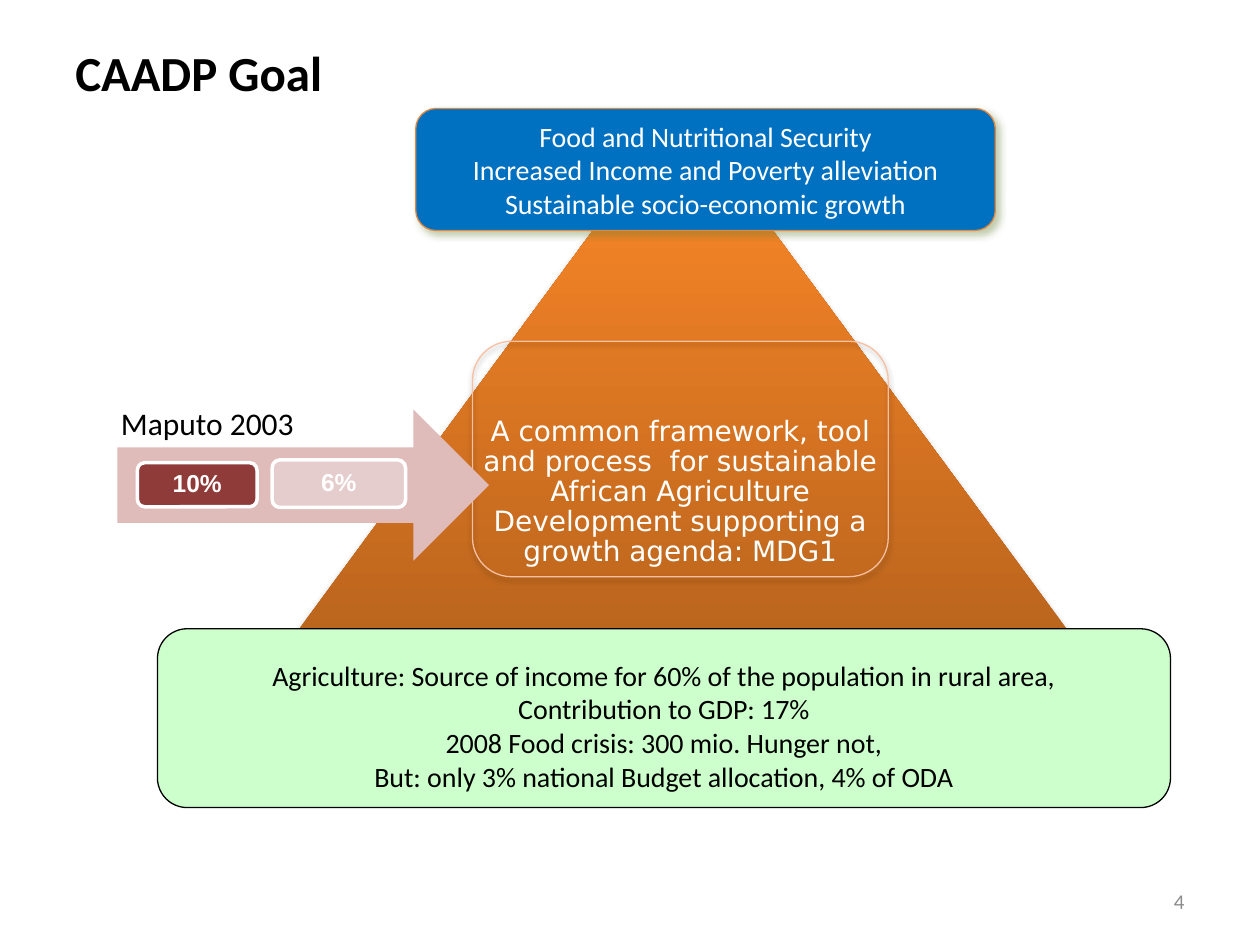
import pptx
import pptx.util
import pptx.dml.color
import pptx.enum.shapes
import pptx.enum.text
import pptx.oxml
import pptx.oxml.ns
from dataclasses import dataclass

Pt = pptx.util.Pt
Shape = pptx.enum.shapes.MSO_SHAPE
Align = pptx.enum.text.PP_ALIGN
Anchor = pptx.enum.text.MSO_ANCHOR


@dataclass(frozen=True)
class Theme:
    body_font: str = "Calibri"
    framework_font: str = "DejaVu Sans"
    badge_font: str = "Arial"
    title_size: int = 28
    label_size: int = 18
    body_size: int = 16
    badge_size: int = 14
    number_size: int = 12
    black: str = "000000"
    white: str = "FFFFFF"
    grey: str = "8C8C8C"
    blue: str = "0070C0"
    orange_line: str = "E08840"
    peach_line: str = "FABF9F"
    green: str = "CCFFCC"
    pink: str = "DFBBBA"
    red: str = "8E3B39"
    pale_pink: str = "E6CDCD"
    pyramid: tuple = ((0, "B9641D"), (80, "F18226"), (100, "F68222"))
    soft_shadow: tuple = ("000000", 35, 3.1, 1.8, 90)
    olive_shadow: tuple = ("677F34", 40, 4, 3, 45)


class SlideBuilder:
    def __init__(self, slide, theme):
        self.slide = slide
        self.theme = theme

    def shape(self, kind, place, fill=None, line=None, line_width=0.75, shadow=None):
        shape = self.slide.shapes.add_shape(kind, *map(Pt, place))
        shape.shadow.inherit = False
        if fill:
            shape.fill.solid()
            shape.fill.fore_color.rgb = pptx.dml.color.RGBColor.from_string(fill)
        else:
            shape.fill.background()
        if line:
            shape.line.color.rgb = pptx.dml.color.RGBColor.from_string(line)
            shape.line.width = Pt(line_width)
        else:
            shape.line.fill.background()
        if shadow:
            self.shadow(shape, *shadow)
        return shape

    def shadow(self, shape, color, opacity, blur, distance, angle):
        effects = shape._element.spPr.find(pptx.oxml.ns.qn("a:effectLst"))
        effects.append(pptx.oxml.parse_xml(
            f'<a:outerShdw {pptx.oxml.ns.nsdecls("a")} blurRad="{Pt(blur)}" '
            f'dist="{Pt(distance)}" dir="{angle * 60000}" algn="ctr" rotWithShape="0">'
            f'<a:srgbClr val="{color}"><a:alpha val="{opacity * 1000}"/></a:srgbClr>'
            '</a:outerShdw>'))

    def gradient(self, shape, stops, angle):
        shape.fill.gradient()
        fill = shape._element.spPr.find(pptx.oxml.ns.qn("a:gradFill"))
        stop_xml = "".join(
            f'<a:gs pos="{position * 1000}"><a:srgbClr val="{color}"/></a:gs>'
            for position, color in stops)
        new_fill = pptx.oxml.parse_xml(
            f'<a:gradFill {pptx.oxml.ns.nsdecls("a")} rotWithShape="1">'
            f'<a:gsLst>{stop_xml}</a:gsLst><a:lin ang="{angle * 60000}" scaled="0"/>'
            '</a:gradFill>')
        fill.getparent().replace(fill, new_fill)

    def add_lines(self, box, lines, size, color, font=None, bold=False, align=Align.CENTER,
                  anchor=Anchor.MIDDLE, inset=None, wrap=True, spacing=None):
        frame = box.text_frame
        frame.word_wrap = wrap
        frame.vertical_anchor = anchor
        if inset is not None:
            frame.margin_left = frame.margin_right = Pt(inset)
            frame.margin_top = frame.margin_bottom = Pt(inset)
        for index, line in enumerate(lines):
            para = frame.add_paragraph() if index else frame.paragraphs[0]
            para.alignment = align
            if spacing:
                para.line_spacing = spacing
            span = para.add_run()
            span.text = line
            span.font.name = font or self.theme.body_font
            span.font.size = Pt(size)
            span.font.bold = bold
            span.font.color.rgb = pptx.dml.color.RGBColor.from_string(color)

    def text(self, place, lines, size, color, **style):
        box = self.slide.shapes.add_textbox(*map(Pt, place))
        self.add_lines(box, lines, size, color, **style)

    def badge(self, place, label, fill):
        box = self.shape(Shape.ROUNDED_RECTANGLE, place, fill, self.theme.white, 2)
        self.add_lines(box, [label], self.theme.badge_size, self.theme.white,
                       font=self.theme.badge_font, bold=True, inset=3, spacing=0.9)


def main():
    theme = Theme()
    deck = pptx.Presentation()
    deck.slide_width, deck.slide_height = Pt(720), Pt(540)
    page = SlideBuilder(deck.slides.add_slide(deck.slide_layouts[6]), theme)

    page.text((36, 20.2, 532, 41.8), ["CAADP Goal"], theme.title_size, theme.black,
              bold=True, align=Align.LEFT)
    page.text((516, 500.5, 168, 28.8), ["4"], theme.number_size, theme.grey,
              align=Align.RIGHT)

    pyramid = page.shape(Shape.ISOSCELES_TRIANGLE, (162, 62, 456.5, 309.6),
                         shadow=theme.soft_shadow)
    page.gradient(pyramid, theme.pyramid, 270)

    goals = page.shape(Shape.ROUNDED_RECTANGLE, (237.6, 62, 331.2, 69.8), theme.blue,
                       theme.orange_line, shadow=theme.olive_shadow)
    page.add_lines(goals, ["Food and Nutritional Security",
                           "Increased Income and Poverty alleviation",
                           "Sustainable socio-economic growth"],
                   theme.body_size, theme.white, inset=3)

    framework_place = (270, 195, 237.6, 134.6)
    page.shape(Shape.ROUNDED_RECTANGLE, framework_place, line=theme.peach_line,
               shadow=theme.soft_shadow)
    page.text(framework_place,
              ["A common framework, tool and process  for sustainable African "
               "Agriculture Development supporting a growth agenda: MDG1"],
              theme.body_size, theme.white, font=theme.framework_font,
              anchor=Anchor.BOTTOM, inset=5, spacing=0.9)

    page.shape(Shape.RIGHT_ARROW, (67, 234, 212.4, 86.4), theme.pink)
    page.badge((78.5, 264.4, 68.4, 25.2), "10%", theme.red)
    page.badge((155.5, 262.8, 76.3, 27.2), "6%", theme.pale_pink)
    page.text((62, 224.6, 149.8, 33.8), ["Maputo 2003"], theme.label_size, theme.black,
              align=Align.LEFT, wrap=False)

    context = page.shape(Shape.FLOWCHART_ALTERNATE_PROCESS, (90, 359.3, 578.9, 102.2),
                         theme.green, theme.black)
    page.add_lines(context,
                   ["Agriculture: Source of income for 60% of the population in rural area,",
                    "Contribution to GDP: 17%",
                    "2008 Food crisis: 300 mio. Hunger not,",
                    "But: only 3% national Budget allocation, 4% of ODA"],
                   theme.body_size, theme.black, anchor=Anchor.BOTTOM, wrap=False)

    deck.save("out.pptx")


if __name__ == "__main__":
    main()
